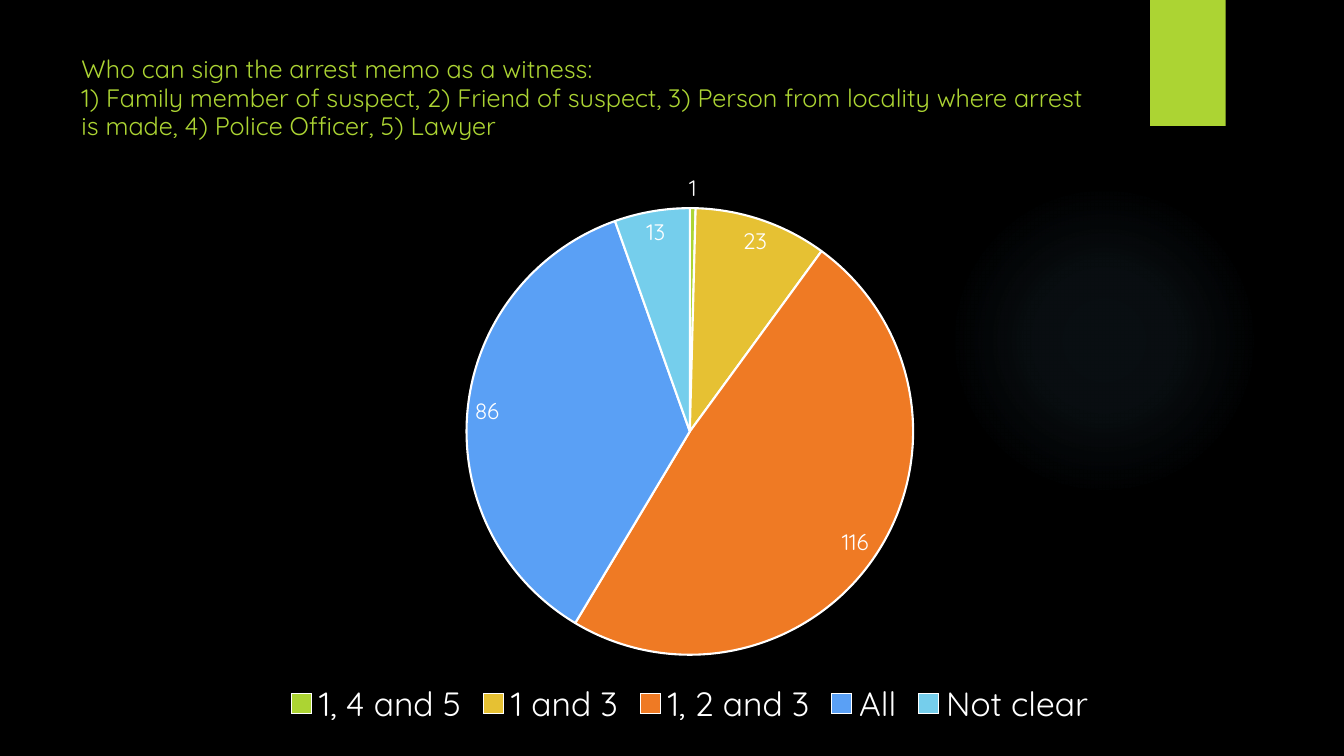
from lxml import etree
from pptx import Presentation
from pptx.chart.data import CategoryChartData
from pptx.dml.color import RGBColor
from pptx.enum import chart as ch, shapes, text
from pptx.oxml import parse_xml
from pptx.util import Pt

FONT = "Quicksand"
GREEN = "ACD433"
WHITE = "FFFFFF"
NS = "http://schemas.openxmlformats.org/drawingml/2006/main"


def rgb(value):
    return RGBColor.from_string(value)


def set_font(font, size, color):
    font.name = FONT
    font.size = Pt(size)
    font.color.rgb = rgb(color)


prs = Presentation()
prs.slide_width, prs.slide_height = Pt(960), Pt(540)
s = prs.slides.add_slide(prs.slide_layouts[5])
s.background.fill.solid()
s.background.fill.fore_color.rgb = rgb("000000")

# Soft glow behind the chart
glow = s.shapes.add_shape(shapes.MSO_SHAPE.OVAL, Pt(677.5), Pt(132), Pt(222), Pt(222))
glow.shadow.inherit = False
glow.line.fill.background()
glow.fill.background()
stops = "".join(
    f'<a:gs pos="{pos * 1000}"><a:srgbClr val="7AC4F0"><a:alpha val="{alpha * 1000}"/></a:srgbClr></a:gs>'
    for pos, alpha in ((0, 7), (36, 6), (69, 0), (100, 0))
)
gradient = parse_xml(
    f'<a:gradFill xmlns:a="{NS}" rotWithShape="1"><a:gsLst>{stops}</a:gsLst>'
    '<a:path path="circle"><a:fillToRect l="50000" t="50000" r="50000" b="50000"/></a:path></a:gradFill>'
)
no_fill = glow.element.spPr.find(etree.QName(NS, "noFill").text)
glow.element.spPr.replace(no_fill, gradient)

# Corner tab
tab = s.shapes.add_shape(shapes.MSO_SHAPE.RECTANGLE, Pt(821.5), Pt(0), Pt(54), Pt(90))
tab.shadow.inherit = False
tab.fill.solid()
tab.fill.fore_color.rgb = rgb(GREEN)
tab.line.fill.background()

# Question
title = s.shapes.title
title.left, title.top, title.width, title.height = Pt(51), Pt(36), Pt(741), Pt(110)
tf = title.text_frame
tf.word_wrap = True
tf.auto_size = text.MSO_AUTO_SIZE.NONE
tf.vertical_anchor = text.MSO_ANCHOR.TOP
tf.text = (
    "Who can sign the arrest memo as a witness:\v"
    "1) Family member of suspect, 2) Friend of suspect, 3) Person from locality "
    "where arrest is made, 4) Police Officer, 5) Lawyer"
)
p = tf.paragraphs[0]
p.alignment = text.PP_ALIGN.LEFT
p.line_spacing = 0.95
set_font(p.font, 18, GREEN)

# Answers
answers = [
    ("1, 4 and 5", 1, GREEN),
    ("1 and 3", 23, "E6C133"),
    ("1, 2 and 3", 116, "EF7A24"),
    ("All", 86, "5AA0F5"),
    ("Not clear", 13, "75CEEC"),
]
data = CategoryChartData()
data.categories = [name for name, _, _ in answers]
data.add_series("Series 1", [count for _, count, _ in answers])
chart = s.shapes.add_chart(
    ch.XL_CHART_TYPE.PIE, Pt(87), Pt(115), Pt(811.5), Pt(407.5), data
).chart
chart.has_title = False
set_font(chart.font, 10, WHITE)
chart.has_legend = True
chart.legend.position = ch.XL_LEGEND_POSITION.BOTTOM
chart.legend.include_in_layout = False
set_font(chart.legend.font, 24, WHITE)

plot = chart.plots[0]
plot.vary_by_categories = True
for i, (_, _, color) in enumerate(answers):
    fmt = plot.series[0].points[i].format
    fmt.fill.solid()
    fmt.fill.fore_color.rgb = rgb(color)
    fmt.line.color.rgb = rgb(WHITE)
    fmt.line.width = Pt(1.5)
labels = plot.series[0].data_labels
labels.show_value = True
labels.position = ch.XL_LABEL_POSITION.BEST_FIT
set_font(labels.font, 16, WHITE)

prs.save("out.pptx")
